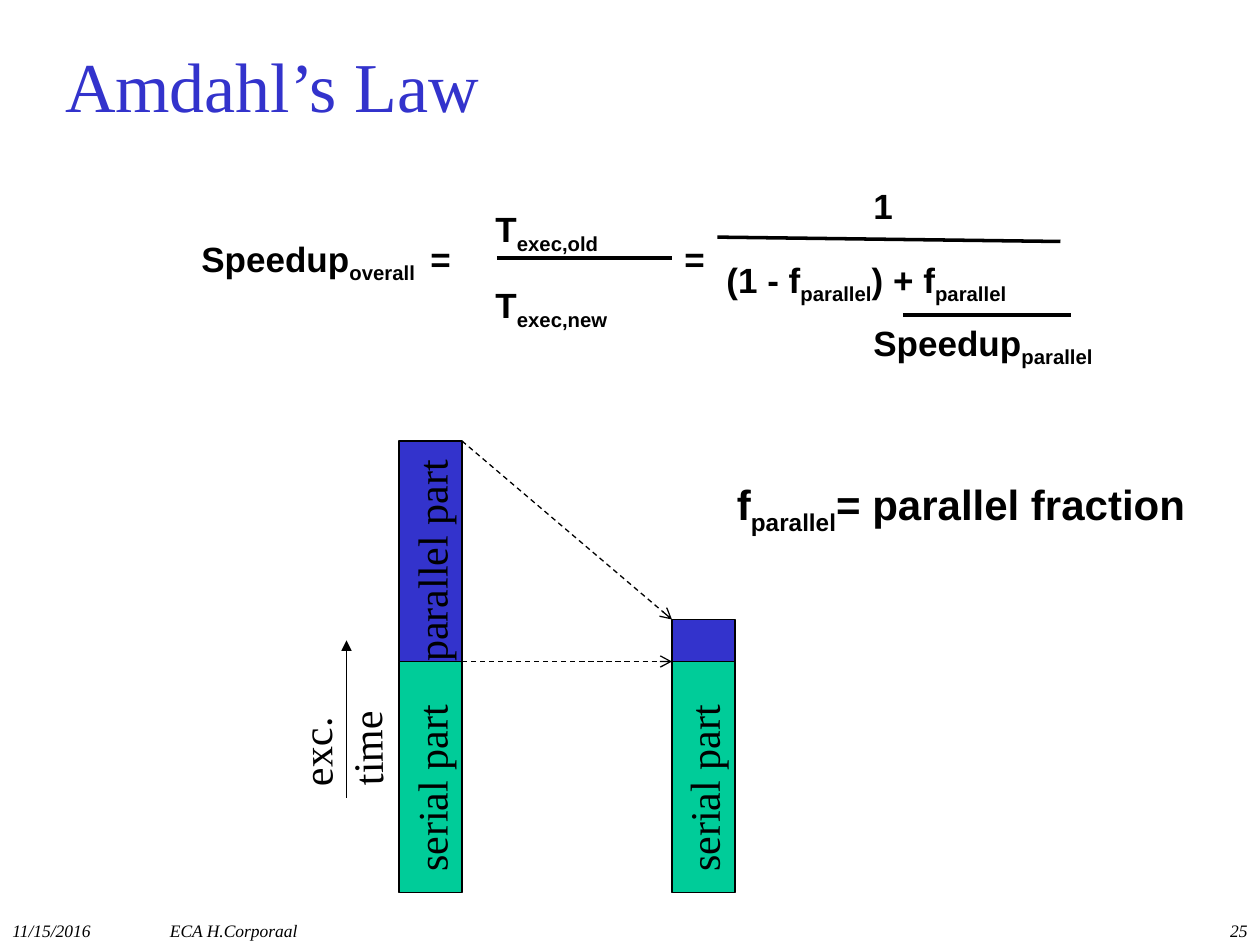
from dataclasses import dataclass

from lxml.etree import SubElement
from pptx import Presentation
from pptx.dml.color import RGBColor
from pptx.enum.dml import MSO_LINE_DASH_STYLE as Dash
from pptx.enum.shapes import MSO_CONNECTOR as Connector, MSO_SHAPE as Preset
from pptx.enum.text import MSO_ANCHOR as Anchor, MSO_AUTO_SIZE as AutoSize, PP_ALIGN as Align
from pptx.oxml.ns import qn
from pptx.util import Pt

BLACK = "000000"
BLUE = "3333CC"
GREEN = "00CC99"
SERIF = "Times New Roman"
SANS = "Arial"
TITLE_ONLY = 5

BAR_WIDTH = 36
OLD_LEFT, NEW_LEFT = 228, 384
OLD_TOP, NEW_TOP = 252, 354
SERIAL_TOP, BAR_BOTTOM = 378, 510


@dataclass(frozen=True)
class Style:
    size: float
    font: str
    color: str = BLACK
    bold: bool = False
    italic: bool = False


@dataclass(frozen=True)
class Span:
    text: str
    subscript: bool = False


@dataclass(frozen=True)
class Label:
    left: float
    top: float
    width: float
    height: float
    paragraphs: tuple[tuple[Span, ...], ...]
    style: Style
    align: Align = Align.LEFT
    rotation: float = 0
    wrap: bool = False
    line_spacing: float = 1
    gap: float = 0


@dataclass(frozen=True)
class Stroke:
    start: tuple[float, float]
    end: tuple[float, float]
    width: float = 0.75
    head: str = ""
    dashed: bool = False


@dataclass(frozen=True)
class Bar:
    left: float
    top: float
    bottom: float
    fill: str


FORMULA = Style(20, SANS, bold=True)
LEGEND = Style(24, SANS, bold=True)
CAPTION = Style(24, SERIF)
FOOTER = Style(10, SERIF, italic=True)
HEADING = Style(40, SERIF, BLUE)


def plain(text: str) -> tuple[tuple[Span, ...], ...]:
    return ((Span(text),),)


def indexed(base: str, index: str) -> tuple[Span, ...]:
    return Span(base), Span(index, True)


LABELS = (
    Label(0, 522, 90, 18, plain("11/15/2016"), FOOTER, wrap=True),
    Label(90, 522, 228, 18, plain("ECA H.Corporaal"), FOOTER, wrap=True),
    Label(570, 522, 150, 18, plain("25"), FOOTER, Align.RIGHT, wrap=True),
    Label(108, 132, 163.5, 31, (indexed("Speedup", "overall ") + (Span(" ="),),), FORMULA),
    Label(276, 116.5, 84, 68.5, (indexed("T", "exec,old"), indexed("T", "exec,new")), FORMULA,
          line_spacing=0.85, gap=20),
    Label(384, 132, 26, 31, plain("="), FORMULA),
    Label(492, 102, 25, 31, plain("1"), FORMULA),
    Label(408, 144, 187, 31, (indexed("(1 - f", "parallel") + indexed(") + f", "parallel"),), FORMULA),
    Label(492, 180, 147, 31, (indexed("Speedup", "parallel"),), FORMULA),
    Label(129, 387.5, 102, 36, plain("exc. time"), CAPTION, rotation=269),
    Label(191.5, 432.5, 109.5, 36, plain("serial part"), CAPTION, rotation=270),
    Label(181.5, 302.5, 129.5, 36, plain("parallel part"), CAPTION, rotation=270),
    Label(347, 432.5, 109.5, 36, plain("serial part"), CAPTION, rotation=270),
    Label(414, 270, 281, 36.5, (indexed("f", "parallel") + (Span("= parallel fraction"),),), LEGEND),
)

BARS = (
    Bar(OLD_LEFT, SERIAL_TOP, BAR_BOTTOM, GREEN),
    Bar(OLD_LEFT, OLD_TOP, SERIAL_TOP, BLUE),
    Bar(NEW_LEFT, SERIAL_TOP, BAR_BOTTOM, GREEN),
    Bar(NEW_LEFT, NEW_TOP, SERIAL_TOP, BLUE),
)

STROKES = (
    Stroke((284, 147.5), (384, 147.5), 2),
    Stroke((410, 135.5), (606, 138), 2),
    Stroke((516, 180), (612, 180), 2),
    Stroke((198, 456), (198, 366), head="triangle"),
    Stroke((OLD_LEFT + BAR_WIDTH, SERIAL_TOP), (NEW_LEFT, SERIAL_TOP), head="arrow", dashed=True),
    Stroke((OLD_LEFT + BAR_WIDTH, OLD_TOP), (NEW_LEFT, NEW_TOP), head="arrow", dashed=True),
)


def paint(target, color: str) -> None:
    target.solid()
    target.fore_color.rgb = RGBColor.from_string(color)


def add_span(para, span: Span, style: Style) -> None:
    run = para.add_run()
    run.text = span.text
    font = run.font
    font.name, font.size = style.font, Pt(style.size)
    font.bold, font.italic = style.bold, style.italic
    paint(font.fill, style.color)
    if span.subscript:
        run._r.get_or_add_rPr().set("baseline", "-25000")


def add_label(page, label: Label) -> None:
    box = page.shapes.add_textbox(Pt(label.left), Pt(label.top), Pt(label.width), Pt(label.height))
    box.rotation = label.rotation
    frame = box.text_frame
    frame.word_wrap = label.wrap
    frame.auto_size = AutoSize.NONE if label.wrap else AutoSize.SHAPE_TO_FIT_TEXT
    for index, spans in enumerate(label.paragraphs):
        para = frame.add_paragraph() if index else frame.paragraphs[0]
        para.alignment = label.align
        para.line_spacing = label.line_spacing
        para.space_before = Pt(label.gap if index else 0)
        for span in spans:
            add_span(para, span, label.style)


def add_bar(page, bar: Bar) -> None:
    shape = page.shapes.add_shape(
        Preset.RECTANGLE, Pt(bar.left), Pt(bar.top), Pt(BAR_WIDTH), Pt(bar.bottom - bar.top))
    shape.shadow.inherit = False
    paint(shape.fill, bar.fill)
    paint(shape.line.fill, BLACK)
    shape.line.width = Pt(0.75)


def add_stroke(page, stroke: Stroke) -> None:
    points = (Pt(value) for value in stroke.start + stroke.end)
    connector = page.shapes.add_connector(Connector.STRAIGHT, *points)
    line = connector.line
    paint(line.fill, BLACK)
    line.width = Pt(stroke.width)
    if stroke.dashed:
        line.dash_style = Dash.DASH
    if stroke.head:
        SubElement(line._get_or_add_ln(), qn("a:tailEnd"), type=stroke.head)
    SubElement(connector._element.spPr, qn("a:effectLst"))


def set_title(page, text: str) -> None:
    title = page.shapes.title
    title.left, title.top, title.width, title.height = Pt(30), Pt(24), Pt(666), Pt(48)
    frame = title.text_frame
    frame.word_wrap = True
    frame.auto_size = AutoSize.NONE
    frame.vertical_anchor = Anchor.MIDDLE
    para = frame.paragraphs[0]
    para.alignment = Align.LEFT
    add_span(para, Span(text), HEADING)


def main() -> None:
    deck = Presentation()
    deck.slide_width, deck.slide_height = Pt(720), Pt(540)
    page = deck.slides.add_slide(deck.slide_layouts[TITLE_ONLY])
    set_title(page, "Amdahl’s Law")
    for bar in BARS:
        add_bar(page, bar)
    for stroke in STROKES:
        add_stroke(page, stroke)
    for label in LABELS:
        add_label(page, label)
    deck.save("out.pptx")


if __name__ == "__main__":
    main()
